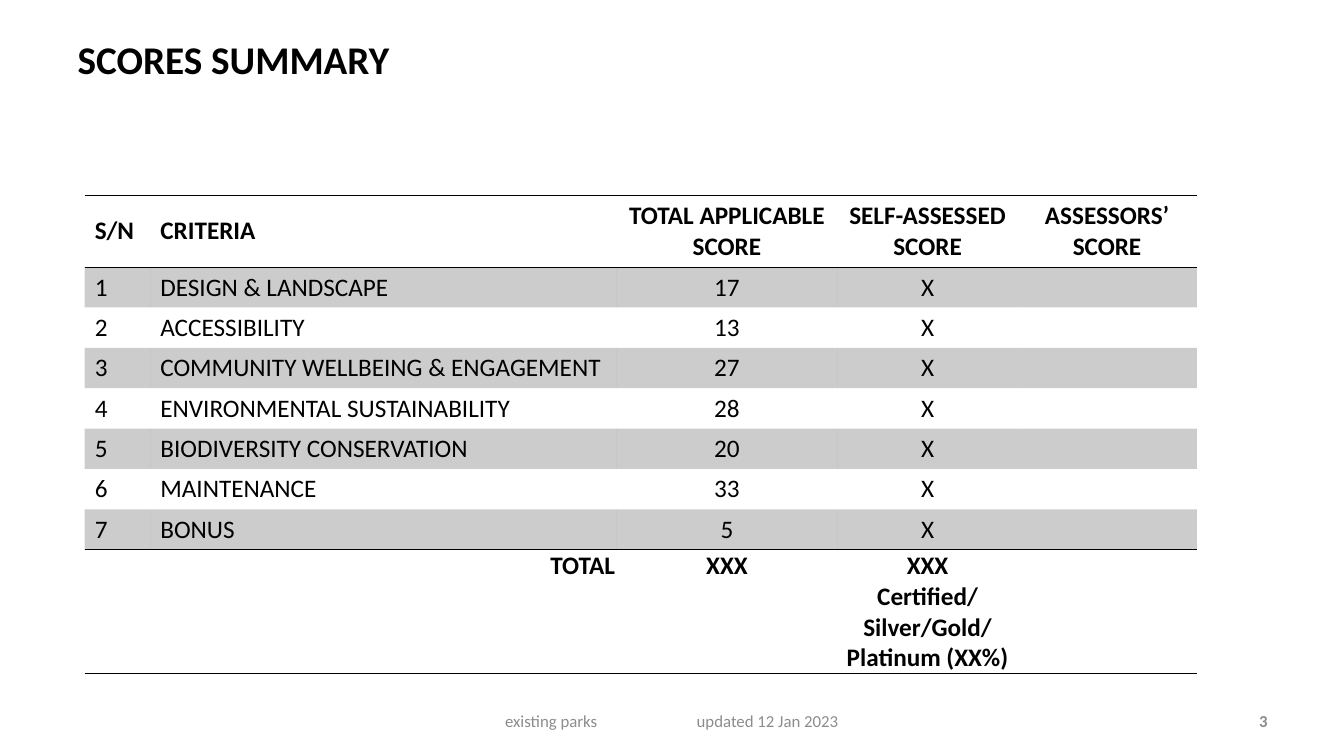
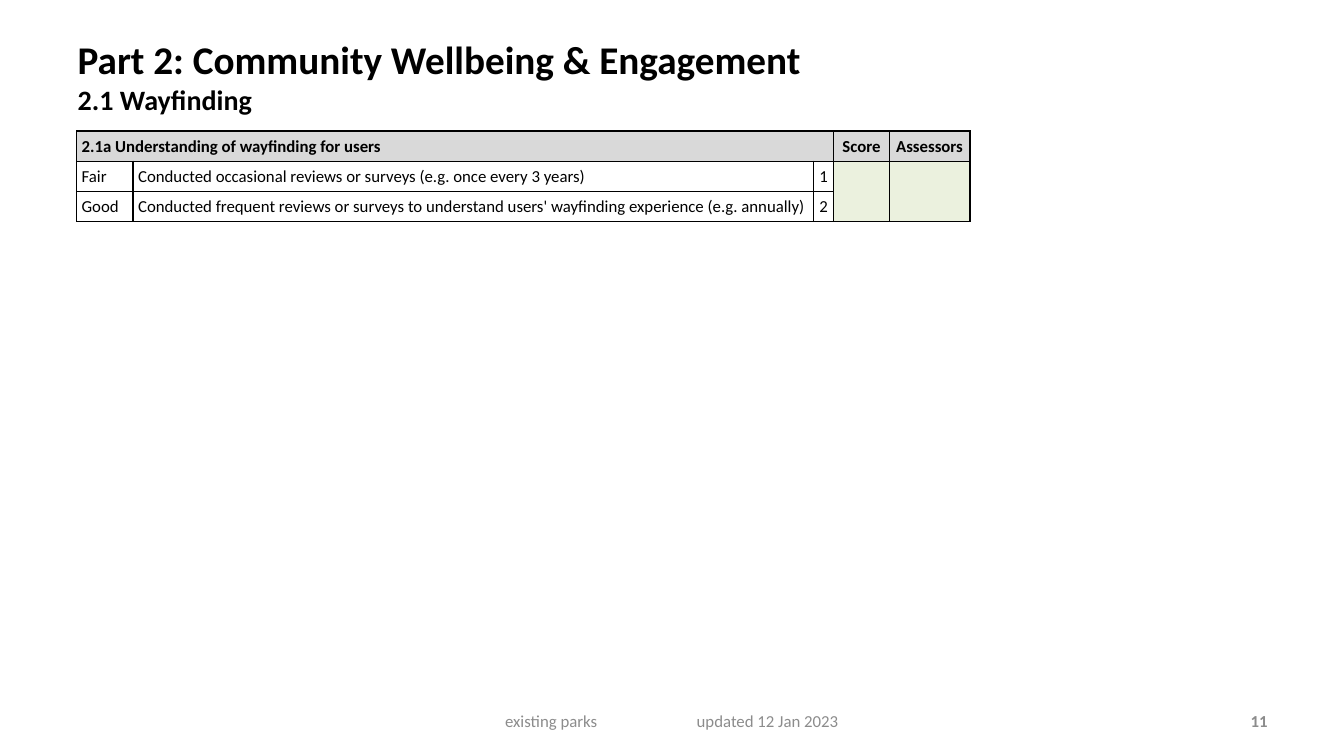
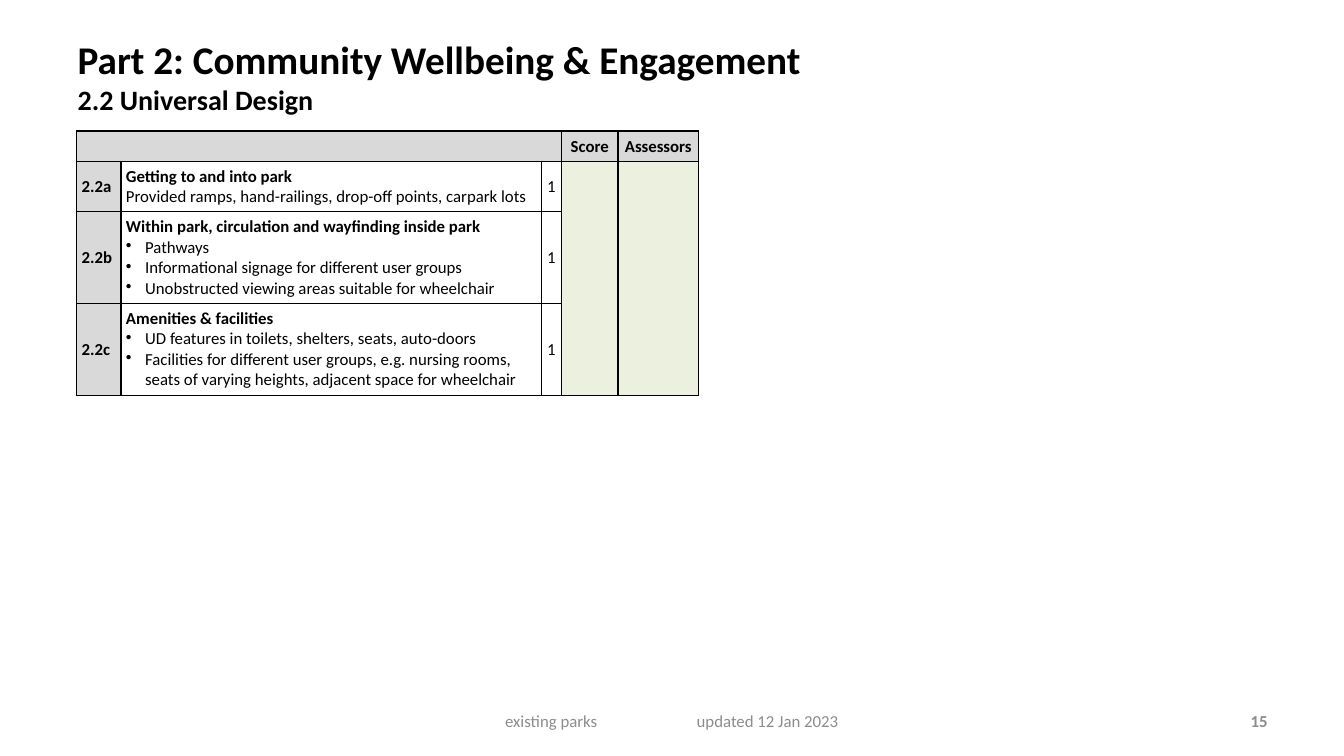
from pptx import Presentation
from pptx.dml.color import RGBColor
from pptx.enum.text import MSO_ANCHOR as ANCHOR, MSO_AUTO_SIZE as AUTO, PP_ALIGN as ALIGN
from pptx.oxml.ns import qn
from pptx.util import Pt
from lxml.etree import SubElement

PX = 9144
FONT = "Calibri"
BLACK = RGBColor(0x00, 0x00, 0x00)
FOOTER_GRAY = RGBColor(0x8C, 0x8C, 0x8C)
HEADER_GRAY = RGBColor(0xD9, 0xD9, 0xD9)
SCORE_GREEN = RGBColor(0xEB, 0xF1, 0xDE)
PLAIN_STYLE = "{2D5ABB26-0587-4C30-8999-92F81FD0307C}"
BULLET = "• "


def px(length):
    return length * PX


def write(frame, text, size=12, bold=False, color=BLACK, align=ALIGN.LEFT,
          lead_size=None, lead_bold=None, tab=None):
    for index, line in enumerate(text.split("\n")):
        paragraph = frame.paragraphs[0] if index == 0 else frame.add_paragraph()
        paragraph.alignment = align
        props = paragraph._p.get_or_add_pPr()
        if line.startswith(BULLET):
            props.set("marL", str(px(19)))
            props.set("indent", str(px(-19)))
            SubElement(props, qn("a:buChar"), char=BULLET.strip())
            line = line.removeprefix(BULLET)
        if tab:
            stops = SubElement(props, qn("a:tabLst"))
            SubElement(stops, qn("a:tab"), pos=str(px(tab)), algn="l")
        if not line:
            paragraph._p.get_or_add_endParaRPr().set("sz", str(size * 100))
            continue
        run = paragraph.add_run()
        run.text = line
        leads = index == 0
        run.font.name = FONT
        run.font.size = Pt(lead_size if leads and lead_size else size)
        run.font.bold = lead_bold if leads and lead_bold is not None else bold
        run.font.color.rgb = color


class Deck:
    def __init__(self):
        self.show = Presentation()
        self.show.slide_width, self.show.slide_height = px(1333), px(750)
        self.slide = None

    def page(self, title, number):
        self.slide = self.show.slides.add_slide(self.show.slide_layouts[5])
        heading = self.slide.shapes.title
        heading.left, heading.top, heading.width, heading.height = map(px, (67, 30, 1036, 99))
        frame = heading.text_frame
        frame.auto_size = AUTO.NONE
        frame.vertical_anchor = ANCHOR.TOP
        write(frame, title, size=20, bold=True, lead_size=28)
        self.label((956, 695, 311, 40), str(number), bold=True,
                   color=FOOTER_GRAY, align=ALIGN.RIGHT)
        self.label((456, 695, 422, 40), "existing parks\tupdated 12 Jan 2023",
                   inset=45, color=FOOTER_GRAY, tab=190)

    def label(self, box, text, inset=10, **style):
        frame = self.slide.shapes.add_textbox(*map(px, box)).text_frame
        frame.word_wrap = True
        frame.vertical_anchor = ANCHOR.MIDDLE
        frame.margin_left = px(inset)
        write(frame, text, **style)

    def table(self, left, top, widths, heights):
        table = self.slide.shapes.add_table(
            len(heights), len(widths), px(left), px(top),
            px(sum(widths)), px(sum(heights))).table
        table.first_row = table.horz_banding = False
        table._tbl.tblPr.find(qn("a:tableStyleId")).text = PLAIN_STYLE
        for column, width in zip(table.columns, widths):
            column.width = px(width)
        for row, height in zip(table.rows, heights):
            row.height = px(height)
        return table

    def cell(self, cell, text="", fill=None, alpha=None, sides="LRTB",
             anchor=ANCHOR.MIDDLE, margins=(5, 5, 5, 5), **style):
        cell.vertical_anchor = anchor
        (cell.margin_left, cell.margin_top,
         cell.margin_right, cell.margin_bottom) = map(px, margins)
        props = cell._tc.get_or_add_tcPr()
        for side in sides:
            line = SubElement(props, qn("a:ln" + side), w=str(Pt(1)))
            SubElement(SubElement(line, qn("a:solidFill")), qn("a:srgbClr"), val=str(BLACK))
        if fill is None:
            cell.fill.background()
        else:
            cell.fill.solid()
            cell.fill.fore_color.rgb = fill
            if alpha:
                tint = props.find(qn("a:solidFill")).find(qn("a:srgbClr"))
                SubElement(tint, qn("a:alpha"), val=str(alpha * 1000))
        write(cell.text_frame, text, **style)

    def summary(self, headings, criteria, total):
        rows = [headings, *criteria, total]
        last = len(rows) - 1
        table = self.table(84, 194, (65, 462, 220, 178, 178),
                           (71, *[40] * len(criteria), 123))
        for r, row in enumerate(rows):
            for c, text in enumerate(row):
                style = dict(size=18, align=ALIGN.CENTER if c > 1 else ALIGN.LEFT,
                             margins=(10, 5, 10, 5))
                if r == 0:
                    style.update(bold=True, sides="TB")
                elif r == last:
                    style.update(bold=True, sides="TB", margins=(1, 1, 1, 0),
                                 anchor=ANCHOR.MIDDLE if c == 3 else ANCHOR.TOP)
                    if c == 1:
                        style.update(align=ALIGN.RIGHT)
                else:
                    style.update(anchor=ANCHOR.BOTTOM, sides="B" if r == last - 1 else "")
                    if r % 2:
                        style.update(fill=BLACK, alpha=20)
                self.cell(table.cell(r, c), text, **style)

    def rubric(self, heading, levels, widths, heights, label_style, lead_bold=None):
        table = self.table(76, 130, widths, heights)
        header = (heading, "", "", "Score", "Assessors")
        for c, text in enumerate(header):
            self.cell(table.cell(0, c), text, fill=HEADER_GRAY, bold=True,
                      align=ALIGN.CENTER if c > 2 else ALIGN.LEFT)
        for r, (label, description, points) in enumerate(levels, 1):
            self.cell(table.cell(r, 0), label, **label_style)
            self.cell(table.cell(r, 1), description, lead_bold=lead_bold)
            self.cell(table.cell(r, 2), points, align=ALIGN.CENTER)
            for c in (3, 4):
                self.cell(table.cell(r, c), fill=SCORE_GREEN)
        table.cell(0, 0).merge(table.cell(0, 2))
        for c in (3, 4):
            table.cell(1, c).merge(table.cell(len(levels), c))


def main():
    deck = Deck()

    deck.page("SCORES SUMMARY", 3)
    scores = (("DESIGN & LANDSCAPE", 17), ("ACCESSIBILITY", 13),
              ("COMMUNITY WELLBEING & ENGAGEMENT", 27),
              ("ENVIRONMENTAL SUSTAINABILITY", 28), ("BIODIVERSITY CONSERVATION", 20),
              ("MAINTENANCE", 33), ("BONUS", 5))
    deck.summary(
        ("S/N", "CRITERIA", "TOTAL APPLICABLE SCORE", "SELF-ASSESSED SCORE", "ASSESSORS’ SCORE"),
        [(str(n), name, str(score), "X", "") for n, (name, score) in enumerate(scores, 1)],
        ("", "TOTAL", "XXX", "XXX\nCertified/Silver/Gold/Platinum (XX%)", ""))

    part = "Part 2: Community Wellbeing & Engagement\n"
    deck.page(part + "2.1 Wayfinding", 11)
    deck.rubric(
        "2.1a Understanding of wayfinding for users",
        (("Fair", "Conducted occasional reviews or surveys (e.g. once every 3 years)", "1"),
         ("Good", "Conducted frequent reviews or surveys to understand users' "
                  "wayfinding experience (e.g. annually)", "2")),
        (56, 675, 20, 55, 80), (30, 30, 30), {})

    deck.page(part + "2.2 Universal Design", 15)
    deck.rubric(
        "",
        (("2.2a", "Getting to and into park\n"
                  "Provided ramps, hand-railings, drop-off points, carpark lots", "1"),
         ("2.2b", "Within park, circulation and wayfinding inside park\n"
                  "• Pathways\n"
                  "• Informational signage for different user groups\n"
                  "• Unobstructed viewing areas suitable for wheelchair", "1"),
         ("2.2c", "Amenities & facilities\n"
                  "• UD features in toilets, shelters, seats, auto-doors\n"
                  "• Facilities for different user groups, e.g. nursing rooms, "
                  "seats of varying heights, adjacent space for wheelchair", "1")),
        (44, 417, 20, 56, 80), (30, 50, 91, 91),
        dict(fill=HEADER_GRAY, bold=True), lead_bold=True)

    deck.show.save("out.pptx")


if __name__ == "__main__":
    main()
